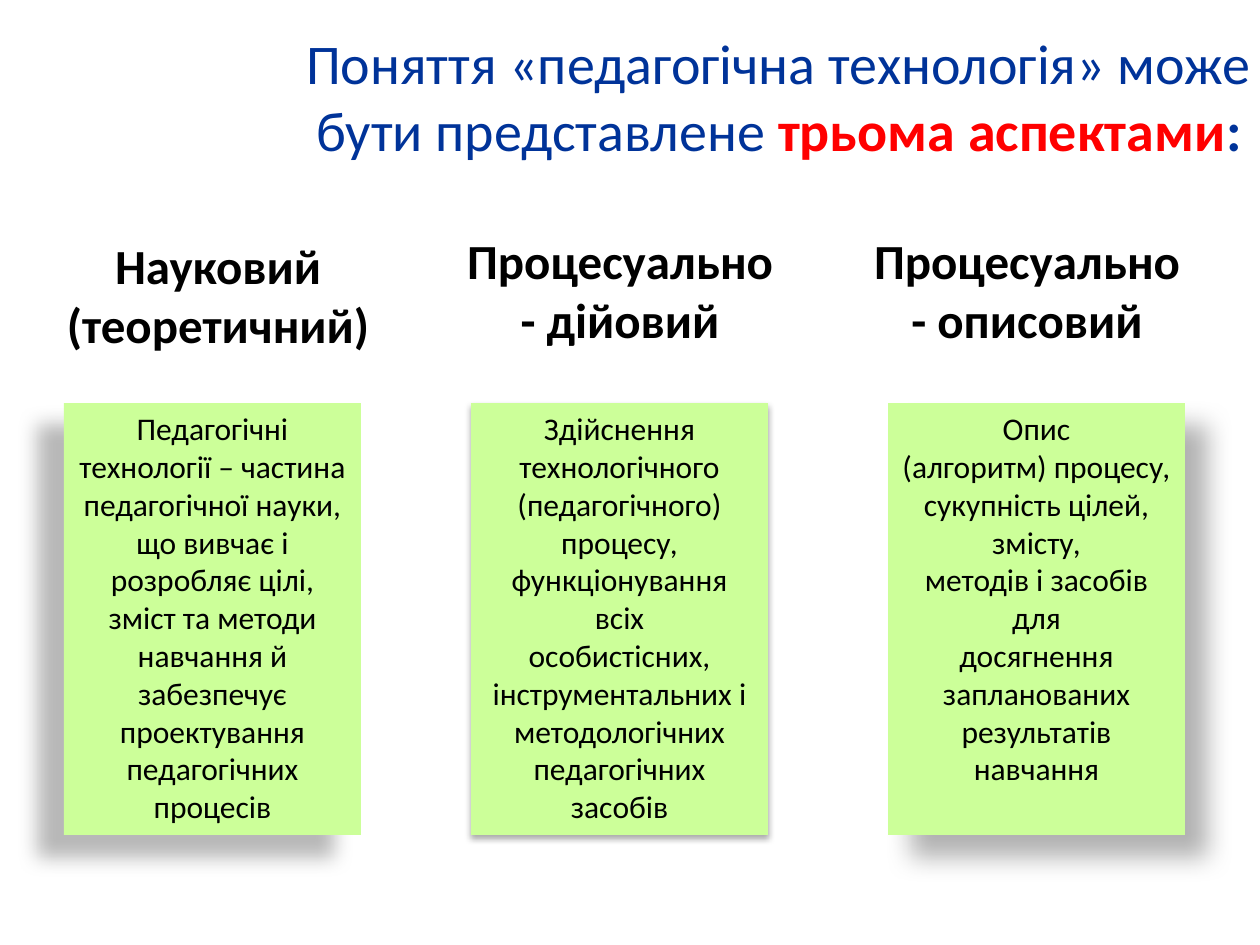
from dataclasses import dataclass

from lxml.etree import SubElement
from pptx import Presentation
from pptx.dml.color import RGBColor
from pptx.enum.shapes import MSO_SHAPE
from pptx.enum.text import MSO_ANCHOR as Anchor, MSO_AUTO_SIZE as AutoSize, PP_ALIGN as Align
from pptx.oxml.ns import qn
from pptx.util import Emu, Pt

EMU_PER_PX = 914400 / 126
TITLE_ONLY = 5


@dataclass(frozen=True)
class Theme:
    font: str = "Calibri"
    title: str = "003399"
    accent: str = "FF0000"
    text: str = "000000"
    card: str = "CCFF99"
    shadow: str = "000000"
    title_size: int = 32
    heading_size: int = 28
    body_size: int = 18


THEME = Theme()

TITLE_BOX = (263, 16, 1032, 159)
TITLE_RUNS = [
    ("Поняття «педагогічна технологія» може бути представлене ", THEME.title, False),
    ("трьома аспектами", THEME.accent, True),
    (":", THEME.title, True),
]

CARD_TOP, CARD_WIDTH, CARD_HEIGHT = 403, 297, 432
HEADING_HEIGHT = 131

# Shadow values: opacity in percent, blur and distance in points, direction in degrees.
ASPECTS = [
    {
        "heading": "Науковий (теоретичний)",
        "heading_box": (44, 229, 348, HEADING_HEIGHT),
        "card_left": 64,
        "shadow": (28, 11.8, 19.7, 141),
        "lines": [
            "Педагогічні технології – частина педагогічної науки, що вивчає і розробляє "
            "цілі, зміст та методи навчання й забезпечує проектування педагогічних процесів",
        ],
    },
    {
        "heading": "Процесуально- дійовий",
        "heading_box": (451, 224, 338, HEADING_HEIGHT),
        "card_left": 471,
        "shadow": (32, 3.5, 2.2, 90),
        "lines": [
            "Здійснення технологічного (педагогічного) процесу, функціонування",
            "всіх",
            "особистісних, інструментальних і методологічних педагогічних засобів",
        ],
    },
    {
        "heading": "Процесуально- описовий",
        "heading_box": (858, 224, 338, HEADING_HEIGHT),
        "card_left": 888,
        "shadow": (30, 15, 18, 45),
        "lines": [
            "Опис",
            "(алгоритм) процесу,",
            "сукупність цілей, змісту,",
            "методів і засобів для",
            "досягнення запланованих результатів навчання",
        ],
    },
]


def px(*lengths):
    return [Emu(round(length * EMU_PER_PX)) for length in lengths]


def set_attributes(target, values):
    for name, value in values.items():
        setattr(target, name, value)


def add_run(paragraph, text, size, color, bold=False):
    run = paragraph.add_run()
    run.text = text
    set_attributes(run.font, {"name": THEME.font, "size": Pt(size), "bold": bold})
    run.font.color.rgb = RGBColor.from_string(color)


def write_lines(text_frame, lines, size, bold=False):
    set_attributes(text_frame, {
        "word_wrap": True,
        "auto_size": AutoSize.SHAPE_TO_FIT_TEXT,
        "vertical_anchor": Anchor.TOP,
    })
    for index, line in enumerate(lines):
        paragraph = text_frame.add_paragraph() if index else text_frame.paragraphs[0]
        paragraph.alignment = Align.CENTER
        add_run(paragraph, line, size, THEME.text, bold)


def add_shadow(shape, opacity, blur, distance, direction):
    shape.shadow.inherit = False
    effects = shape.element.spPr.find(qn("a:effectLst"))
    shadow = SubElement(effects, qn("a:outerShdw"), {
        "blurRad": str(Pt(blur)),
        "dist": str(Pt(distance)),
        "dir": str(direction * 60000),
        "algn": "ctr",
        "rotWithShape": "0",
    })
    color = SubElement(shadow, qn("a:srgbClr"), val=THEME.shadow)
    SubElement(color, qn("a:alpha"), val=str(opacity * 1000))


def fill_title(slide, box):
    title = slide.shapes.title
    set_attributes(title, dict(zip(("left", "top", "width", "height"), px(*box))))
    set_attributes(title.text_frame, {
        "word_wrap": True,
        "auto_size": AutoSize.NONE,
        "vertical_anchor": Anchor.MIDDLE,
    })
    paragraph = title.text_frame.paragraphs[0]
    paragraph.alignment = Align.CENTER
    for text, color, bold in TITLE_RUNS:
        add_run(paragraph, text, THEME.title_size, color, bold)


def add_heading(slide, box, text):
    heading = slide.shapes.add_textbox(*px(*box))
    write_lines(heading.text_frame, [text], THEME.heading_size, bold=True)


def add_card(slide, box, lines, shadow):
    card = slide.shapes.add_shape(MSO_SHAPE.RECTANGLE, *px(*box))
    card.fill.solid()
    card.fill.fore_color.rgb = RGBColor.from_string(THEME.card)
    card.line.fill.background()
    add_shadow(card, *shadow)
    write_lines(card.text_frame, lines, THEME.body_size)


def main():
    presentation = Presentation()
    presentation.slide_width, presentation.slide_height = px(1260, 945)
    slide = presentation.slides.add_slide(presentation.slide_layouts[TITLE_ONLY])
    fill_title(slide, TITLE_BOX)
    for aspect in ASPECTS:
        add_heading(slide, aspect["heading_box"], aspect["heading"])
    for aspect in ASPECTS:
        card_box = (aspect["card_left"], CARD_TOP, CARD_WIDTH, CARD_HEIGHT)
        add_card(slide, card_box, aspect["lines"], aspect["shadow"])
    presentation.save("out.pptx")


if __name__ == "__main__":
    main()
